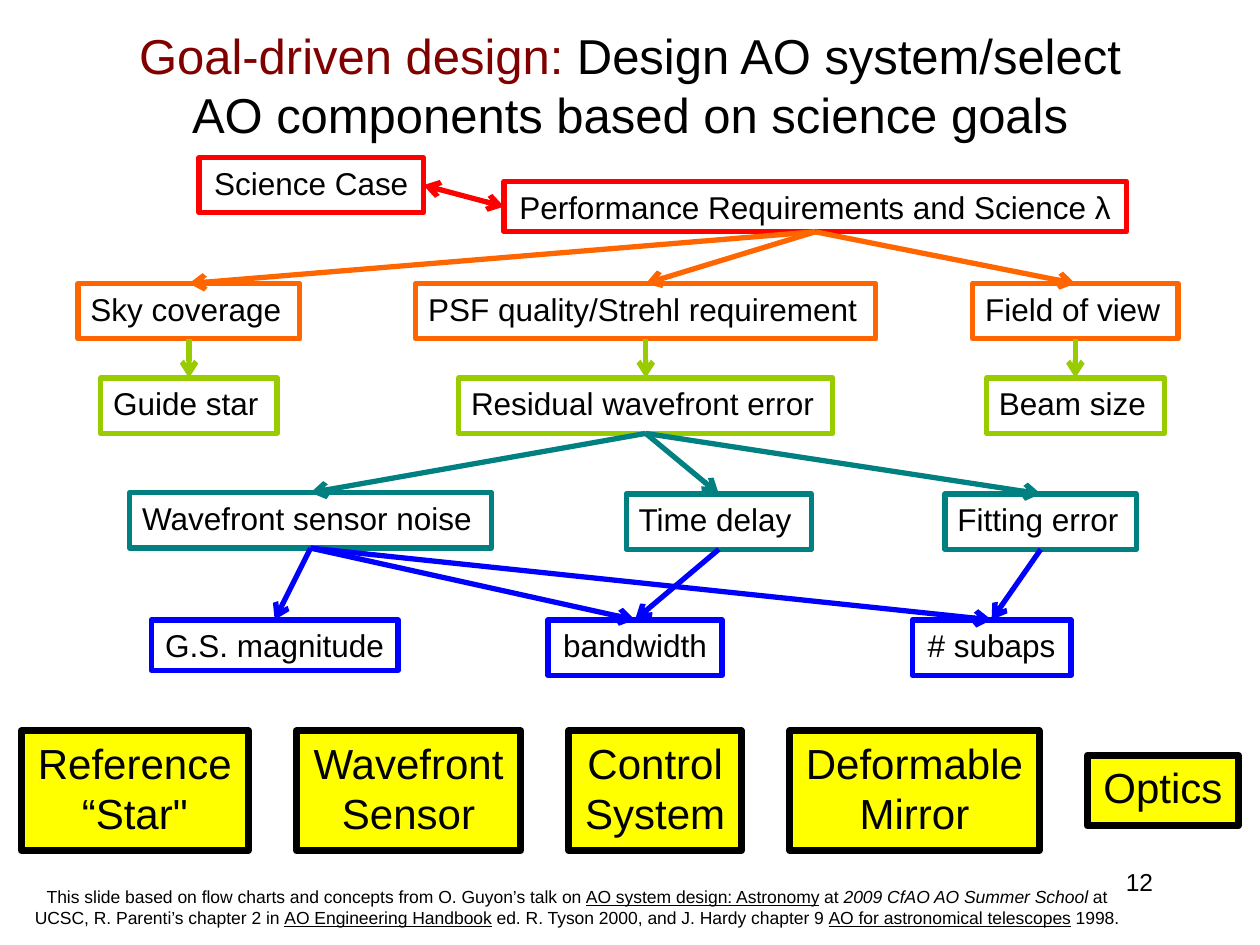
from dataclasses import dataclass

from lxml import etree
from pptx import Presentation
from pptx.dml.color import RGBColor
from pptx.enum.shapes import MSO_CONNECTOR, MSO_SHAPE
from pptx.enum.text import MSO_ANCHOR, MSO_AUTO_SIZE, PP_ALIGN
from pptx.oxml.ns import qn
from pptx.util import Inches, Pt

RECTANGLE = MSO_SHAPE.RECTANGLE
STRAIGHT = MSO_CONNECTOR.STRAIGHT
TOP, MIDDLE = MSO_ANCHOR.TOP, MSO_ANCHOR.MIDDLE
LEFT, CENTER, RIGHT = PP_ALIGN.LEFT, PP_ALIGN.CENTER, PP_ALIGN.RIGHT
FIT_SHAPE = MSO_AUTO_SIZE.SHAPE_TO_FIT_TEXT
SITE_TOP, SITE_LEFT, SITE_BOTTOM, SITE_RIGHT = range(4)

BLACK, MAROON, YELLOW = "000000", "800000", "FFFF00"
RED, ORANGE, GREEN, TEAL, BLUE = "FF0000", "FF6600", "99CC00", "008080", "0000FF"

# Colour, alignment, then nodes: text, left, top, width, height within the chart
TIERS = [
    (RED, CENTER, [("Science Case", 0.98, 0, 1.78, 0.44),
                   ("Performance Requirements and Science λ", 3.4, 0.19, 4.94, 0.4)]),
    (ORANGE, LEFT, [("Sky coverage", 0.02, 1, 1.76, 0.44),
                    ("PSF quality/Strehl requirement", 2.7, 1, 3.65, 0.44),
                    ("Field of view", 7.12, 1, 1.63, 0.44)]),
    (GREEN, LEFT, [("Guide star", 0.2, 1.75, 1.4, 0.44),
                   ("Residual wavefront error", 3.04, 1.75, 2.97, 0.44),
                   ("Beam size", 7.23, 1.75, 1.41, 0.44)]),
    (TEAL, LEFT, [("Wavefront sensor noise", 0.43, 2.66, 2.87, 0.44),
                  ("Time delay", 4.37, 2.67, 1.47, 0.44),
                  ("Fitting error", 6.9, 2.67, 1.52, 0.44)]),
    (BLUE, CENTER, [("G.S. magnitude", 0.6, 3.67, 1.96, 0.4),
                    ("bandwidth", 3.75, 3.67, 1.38, 0.44),
                    ("# subaps", 6.64, 3.67, 1.26, 0.44)]),
]
# Colour of the arrows, then parent and children
BRANCHES = [
    (ORANGE, "Performance Requirements and Science λ",
     ["PSF quality/Strehl requirement", "Sky coverage", "Field of view"]),
    (GREEN, "Sky coverage", ["Guide star"]),
    (GREEN, "PSF quality/Strehl requirement", ["Residual wavefront error"]),
    (GREEN, "Field of view", ["Beam size"]),
    (TEAL, "Residual wavefront error",
     ["Wavefront sensor noise", "Time delay", "Fitting error"]),
    (BLUE, "Wavefront sensor noise", ["G.S. magnitude", "bandwidth", "# subaps"]),
    (BLUE, "Time delay", ["bandwidth"]),
    (BLUE, "Fitting error", ["# subaps"]),
]
# Lines of text, width, height
COMPONENTS = [
    (["Reference", "“Star\""], 1.8, 0.95),
    (["Wavefront", "Sensor"], 1.78, 0.95),
    (["Control", "System"], 1.37, 0.95),
    (["Deformable", "Mirror"], 1.98, 0.95),
    (["Optics"], 1.2, 0.56),
]
# Text, underlined, italic
CREDITS = [
    ("This slide based on flow charts and concepts from O. Guyon’s talk on ", False, False),
    ("AO system design: Astronomy", True, False),
    (" at ", False, False),
    ("2009 CfAO AO Summer School", False, True),
    (" at UCSC, R. Parenti’s chapter 2 in ", False, False),
    ("AO Engineering Handbook", True, False),
    (" ed. R. Tyson 2000, and J. Hardy chapter 9 ", False, False),
    ("AO for astronomical telescopes", True, False),
    (" 1998.", False, False),
]


@dataclass
class Box:
    left: float
    top: float
    width: float
    height: float

    def inches(self):
        return [Inches(n) for n in (self.left, self.top, self.width, self.height)]


def colour(value):
    return RGBColor.from_string(value)


def add_span(para, text, size, ink=BLACK, underline=False, italic=False):
    span = para.add_run()
    span.text = text
    font = span.font
    font.name, font.size = "Arial", Pt(size)
    font.color.rgb = colour(ink)
    if underline:
        font.underline = True
    if italic:
        font.italic = True


def add_text_box(page, box, align, anchor=TOP):
    """Add an empty wrapping text box and return its first paragraph."""
    frame = page.shapes.add_textbox(*box.inches()).text_frame
    frame.word_wrap = True
    frame.vertical_anchor = anchor
    frame.paragraphs[0].alignment = align
    return frame.paragraphs[0]


def add_label(page, box, lines, size, align, outline, weight, fill=None):
    """Add an outlined rectangle with one paragraph for each line."""
    label = page.shapes.add_shape(RECTANGLE, *box.inches())
    label.shadow.inherit = False
    label.line.color.rgb = colour(outline)
    label.line.width = Pt(weight)
    if fill:
        label.fill.solid()
        label.fill.fore_color.rgb = colour(fill)
    else:
        label.fill.background()
    frame = label.text_frame
    frame.word_wrap = False
    frame.auto_size = FIT_SHAPE
    frame.vertical_anchor = TOP
    for index, line in enumerate(lines):
        para = frame.add_paragraph() if index else frame.paragraphs[0]
        para.alignment = align
        add_span(para, line, size)
    return label


def add_arrow(page, start, start_site, end, end_site, ink, ends=("tailEnd",)):
    arrow = page.shapes.add_connector(STRAIGHT, 0, 0, 0, 0)
    arrow.begin_connect(start, start_site)
    arrow.end_connect(end, end_site)
    arrow.line.color.rgb = colour(ink)
    arrow.line.width = Pt(3)
    line = arrow.line._get_or_add_ln()
    for tag in ends:
        etree.SubElement(line, qn(f"a:{tag}"), type="arrow")
    etree.SubElement(arrow._element.spPr, qn("a:effectLst"))


def add_title(page, box):
    para = add_text_box(page, box, CENTER, MIDDLE)
    add_span(para, "Goal-driven design:", 28, MAROON)
    add_span(para, " Design AO system/select AO components based on science goals", 28)


def add_flow_chart(page, box):
    nodes = {}
    for ink, align, tier in TIERS:
        for text, left, top, width, height in tier:
            place = Box(box.left + left, box.top + top, width, height)
            nodes[text] = add_label(page, place, [text], 18, align, ink, 3)
    for ink, parent, children in BRANCHES:
        for child in children:
            add_arrow(page, nodes[parent], SITE_BOTTOM, nodes[child], SITE_TOP, ink)
    add_arrow(page, nodes["Science Case"], SITE_RIGHT,
              nodes["Performance Requirements and Science λ"], SITE_LEFT,
              RED, ("headEnd", "tailEnd"))


def add_components(page, box):
    """Spread the component labels over the box with equal gaps."""
    used = sum(width for _, width, _ in COMPONENTS)
    gap = (box.width - used) / (len(COMPONENTS) - 1)
    left = box.left
    for lines, width, height in COMPONENTS:
        place = Box(left, box.top + (box.height - height) / 2, width, height)
        add_label(page, place, lines, 24, CENTER, BLACK, 4, YELLOW)
        left += width + gap


def add_credits(page, box):
    para = add_text_box(page, box, CENTER)
    for text, underline, italic in CREDITS:
        add_span(para, text, 10, underline=underline, italic=italic)


def add_page_number(page, box):
    add_span(add_text_box(page, box, RIGHT), "12", 14)


def main():
    deck = Presentation()
    deck.slide_width, deck.slide_height = Inches(10), Inches(7.5)
    page = deck.slides.add_slide(deck.slide_layouts[6])
    add_page_number(page, Box(7.17, 6.83, 2.08, 0.5))
    add_credits(page, Box(0.08, 6.98, 9, 0.43))
    add_title(page, Box(0.75, 0.17, 8.5, 1))
    add_flow_chart(page, Box(0.6, 1.25, 8.75, 4.11))
    add_components(page, Box(0.17, 5.8, 9.66, 0.95))
    deck.save("out.pptx")


if __name__ == "__main__":
    main()
